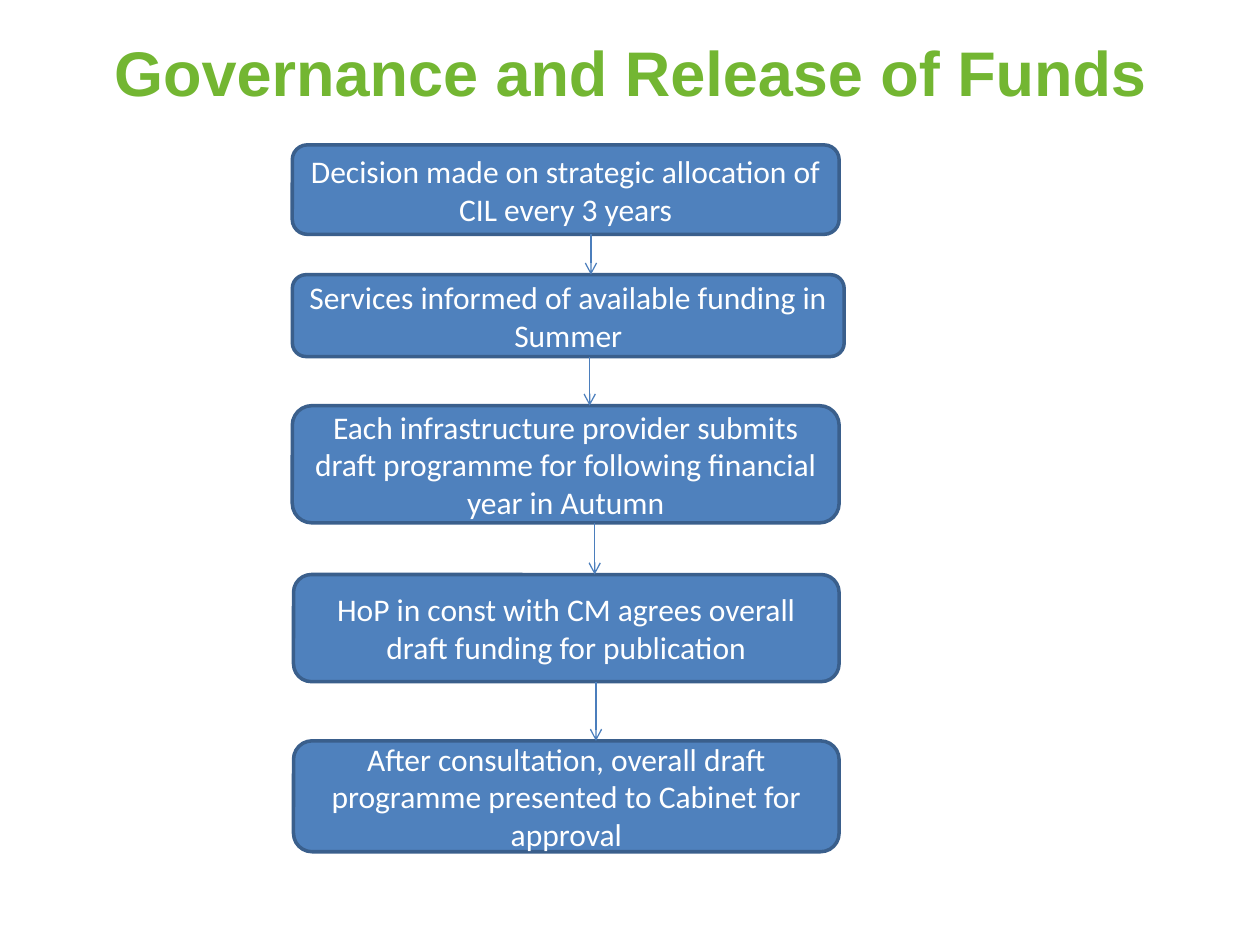
import pptx
import pptx.util
import pptx.dml.color
import pptx.enum.shapes
import pptx.enum.text
import pptx.oxml
import pptx.oxml.ns
from dataclasses import dataclass
from itertools import pairwise
from lxml import etree

Inches = pptx.util.Inches
Pt = pptx.util.Pt
RGB = pptx.dml.color.RGBColor


@dataclass(frozen=True)
class Theme:
    title_color: RGB = RGB.from_string("73B632")
    step_fill: RGB = RGB.from_string("4F81BD")
    step_border: RGB = RGB.from_string("3A5F8C")
    step_text: RGB = RGB.from_string("FFFFFF")
    arrow: RGB = RGB.from_string("4B7EBC")
    title_font: str = "Arial"
    step_font: str = "Calibri"
    title_size: Pt = Pt(36)
    step_size: Pt = Pt(18)


theme = Theme()


def write_centred(frame, text, font_name, size, color):
    frame.word_wrap = True
    frame.vertical_anchor = pptx.enum.text.MSO_ANCHOR.MIDDLE
    frame.text = text
    paragraph = frame.paragraphs[0]
    paragraph.alignment = pptx.enum.text.PP_ALIGN.CENTER
    paragraph.font.name = font_name
    paragraph.font.size = size
    paragraph.font.color.rgb = color
    return paragraph


presentation = pptx.Presentation()
presentation.slide_width = Inches(10)
presentation.slide_height = Inches(7.5)
slide = presentation.slides.add_slide(presentation.slide_layouts[5])

# Title
title = slide.shapes.title
title.left, title.top = Inches(0.2), Inches(0.21)
title.width, title.height = Inches(9.61), Inches(0.71)
heading = write_centred(title.text_frame, "Governance and Release of Funds",
                        theme.title_font, theme.title_size, theme.title_color)
heading.font.bold = True

# Steps: text, left, top, width, height, x of the arrow leaving the step
steps = [
    ("Decision made on strategic allocation of CIL every 3 years",
     2.32, 1.15, 4.34, 0.71, 4.69),
    ("Services informed of available funding in Summer",
     2.32, 2.18, 4.38, 0.65, 4.68),
    ("Each infrastructure provider submits draft programme for following "
     "financial year in Autumn",
     2.32, 3.22, 4.34, 0.93, 4.72),
    ("HoP in const with CM agrees overall draft funding for publication",
     2.33, 4.56, 4.33, 0.85, 4.73),
    ("After consultation, overall draft programme presented to Cabinet for "
     "approval",
     2.33, 5.88, 4.33, 0.88, None),
]
for text, left, top, width, height, _ in steps:
    step = slide.shapes.add_shape(
        pptx.enum.shapes.MSO_SHAPE.ROUNDED_RECTANGLE,
        Inches(left), Inches(top), Inches(width), Inches(height))
    step.shadow.inherit = False
    step.fill.solid()
    step.fill.fore_color.rgb = theme.step_fill
    step.line.color.rgb = theme.step_border
    step.line.width = Pt(2)
    write_centred(step.text_frame, text,
                  theme.step_font, theme.step_size, theme.step_text)

# Arrows from the foot of each step to the top of the next
for (_, _, top, _, height, x), (_, _, next_top, *_) in pairwise(steps):
    arrow = slide.shapes.add_connector(
        pptx.enum.shapes.MSO_CONNECTOR.STRAIGHT,
        Inches(x), Inches(top + height), Inches(x), Inches(next_top))
    arrow.line.color.rgb = theme.arrow
    arrow.line.width = Pt(0.75)
    etree.SubElement(arrow.line._get_or_add_ln(),
                     pptx.oxml.ns.qn("a:tailEnd"), type="arrow")
    etree.SubElement(arrow._element.spPr, pptx.oxml.ns.qn("a:effectLst"))

presentation.save("out.pptx")
